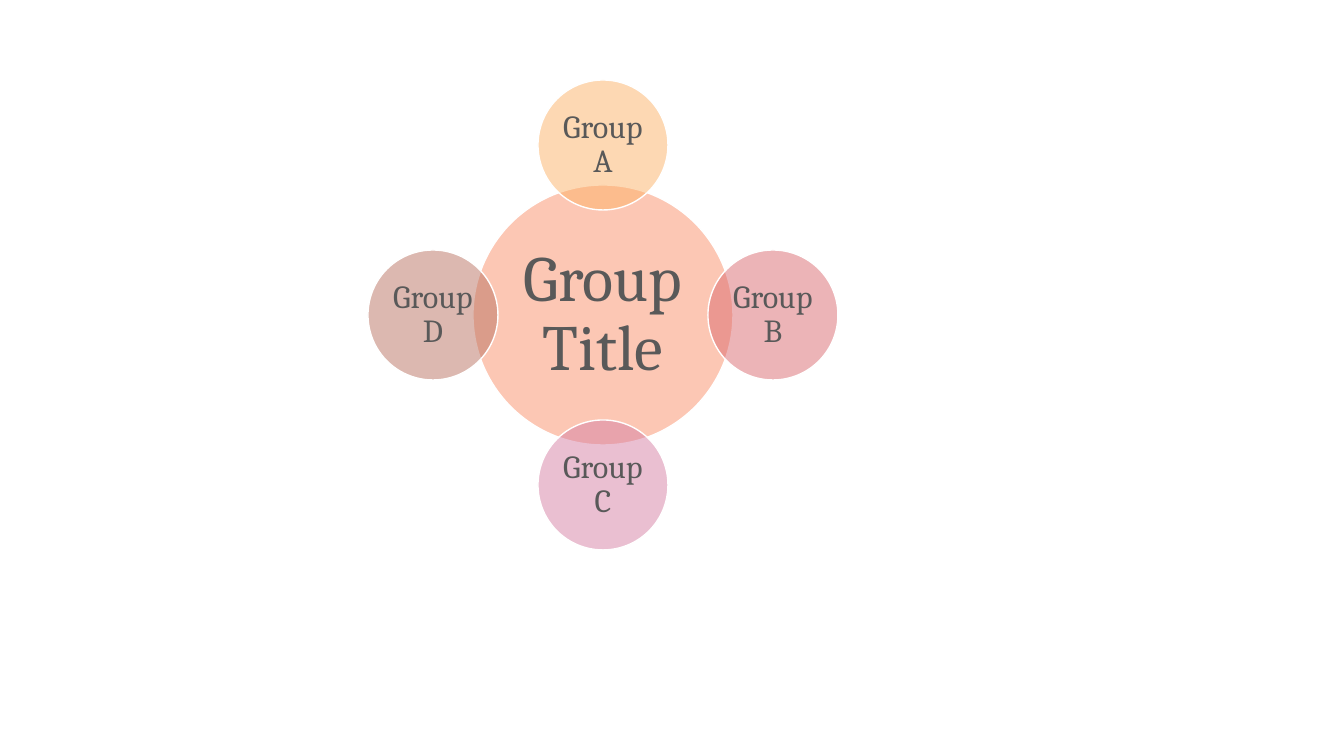
from lxml import etree
from pptx import Presentation
from pptx import util as u
from pptx.dml.color import RGBColor
from pptx.enum import shapes, text
from pptx.oxml.ns import qn

PX = 914400 / 100.8  # EMU per px


def px(n):
    return u.Emu(round(n * PX))


def color(hex_code):
    return RGBColor.from_string(hex_code)


prs = Presentation()
prs.slide_width, prs.slide_height = px(1344), px(756)
s = prs.slides.add_slide(prs.slide_layouts[6])

# Radial diagram: one centre circle and four on an orbit around it
CENTER_X, CENTER_Y, ORBIT = 603, 315, 170
circles = [
    # label, x step, y step, diameter, fill, font size, inset
    ("Group Title", 0, 0, 260, "FA906A", 46, 6),
    ("Group A", 0, -1, 130, "FCB268", 23, 3),
    ("Group B", 1, 0, 130, "DB6B70", 23, 3),
    ("Group C", 0, 1, 130, "D680A5", 23, 3),
    ("Group D", -1, 0, 130, "BA7362", 23, 3),
]

for label, dx, dy, size, fill, points, inset in circles:
    left = CENTER_X + dx * ORBIT - size // 2
    top = CENTER_Y + dy * ORBIT - size // 2
    sp = s.shapes.add_shape(
        shapes.MSO_SHAPE.OVAL, px(left), px(top), px(size), px(size))
    sp.shadow.inherit = False

    # Half-transparent fill with a white outline
    sp.fill.solid()
    sp.fill.fore_color.rgb = color(fill)
    rgb = sp.fill._xPr.find(qn("a:solidFill")).find(qn("a:srgbClr"))
    etree.SubElement(rgb, qn("a:alpha")).set("val", "50000")
    sp.line.color.rgb = color("FFFFFF")
    sp.line.width = u.Pt(1)

    # Centred label
    tf = sp.text_frame
    tf.word_wrap = True
    tf.vertical_anchor = text.MSO_ANCHOR.MIDDLE
    tf.margin_left = tf.margin_right = px(inset)
    tf.margin_top = tf.margin_bottom = px(inset)
    p = tf.paragraphs[0]
    p.alignment = text.PP_ALIGN.CENTER
    p.line_spacing = 0.9
    r = p.add_run()
    r.text = label
    r.font.name = "Cambria"
    r.font.size = u.Pt(points)
    r.font.color.rgb = color("595959")

prs.save("out.pptx")
